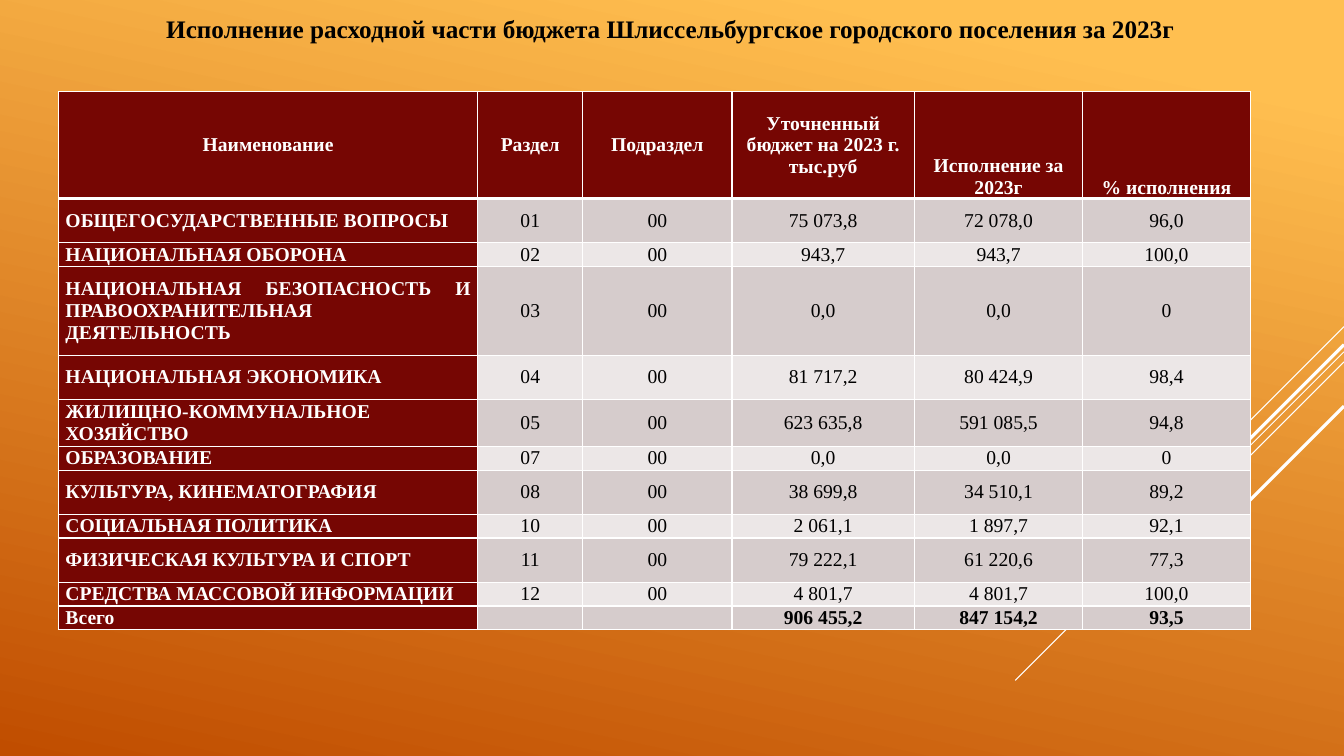
"""Builds the slide on budget spending of the Shlisselburg settlement in 2023."""
from lxml import etree
from pptx import Presentation
from pptx.dml.color import RGBColor
from pptx.enum.shapes import MSO_CONNECTOR
from pptx.enum.text import MSO_ANCHOR, PP_ALIGN
from pptx.oxml.ns import qn
from pptx.util import Inches, Pt

STRAIGHT = MSO_CONNECTOR.STRAIGHT
MIDDLE, BOTTOM = MSO_ANCHOR.MIDDLE, MSO_ANCHOR.BOTTOM
CENTER, JUSTIFY = PP_ALIGN.CENTER, PP_ALIGN.JUSTIFY

FONT = "Times New Roman"
COLORS = {
    "light": "FFBF50", "dark": "C04D00", "white": "FFFFFF", "black": "000000",
    "maroon": "760603", "odd": "D6CCCC", "even": "ECE7E7",
}
TITLE = "Исполнение расходной части бюджета Шлиссельбургское городского поселения за 2023г"
HEADERS = ["Наименование", "Раздел", "Подраздел", "Уточненный бюджет на 2023 г. тыс.руб",
           "Исполнение за 2023г", "% исполнения"]
SPENDING = [
    ("ОБЩЕГОСУДАРСТВЕННЫЕ ВОПРОСЫ", "01", "00", "75 073,8", "72 078,0", "96,0"),
    ("НАЦИОНАЛЬНАЯ ОБОРОНА", "02", "00", "943,7", "943,7", "100,0"),
    ("НАЦИОНАЛЬНАЯ БЕЗОПАСНОСТЬ И ПРАВООХРАНИТЕЛЬНАЯ ДЕЯТЕЛЬНОСТЬ", "03", "00", "0,0", "0,0", "0"),
    ("НАЦИОНАЛЬНАЯ ЭКОНОМИКА", "04", "00", "81 717,2", "80 424,9", "98,4"),
    ("ЖИЛИЩНО-КОММУНАЛЬНОЕ ХОЗЯЙСТВО", "05", "00", "623 635,8", "591 085,5", "94,8"),
    ("ОБРАЗОВАНИЕ", "07", "00", "0,0", "0,0", "0"),
    ("КУЛЬТУРА, КИНЕМАТОГРАФИЯ", "08", "00", "38 699,8", "34 510,1", "89,2"),
    ("СОЦИАЛЬНАЯ ПОЛИТИКА", "10", "00", "2 061,1", "1 897,7", "92,1"),
    ("ФИЗИЧЕСКАЯ КУЛЬТУРА И СПОРТ", "11", "00", "79 222,1", "61 220,6", "77,3"),
    ("СРЕДСТВА МАССОВОЙ ИНФОРМАЦИИ", "12", "00", "4 801,7", "4 801,7", "100,0"),
    ("Всего", "", "", "906 455,2", "847 154,2", "93,5"),
]
COL_WIDTHS = [4.16, 1.04, 1.48, 1.81, 1.67, 1.66]
ROW_HEIGHTS = [1.06, 0.44, 0.22, 0.88, 0.44, 0.44, 0.22, 0.44, 0.22, 0.44, 0.22, 0.22]
SLIDE_W, SLIDE_H = 13.33, 7.5
RAYS = [(3.24, 1.0, 0.75), (3.49, 3.26, 0.75), (3.59, 2.07, 0.75),
        (3.42, 1.91, 2.25), (4.03, 1.39, 2.25)]


def rgb(name):
    return RGBColor.from_string(COLORS[name])


def write(p, text, size, color, bold, align):
    p.text = text
    p.alignment = align
    for r in p.runs:
        r.font.name, r.font.size, r.font.bold = FONT, Pt(size), bold
        r.font.color.rgb = rgb(color)
    if not text:
        etree.SubElement(p._p, qn("a:endParaRPr"), sz=str(size * 100))


def set_borders(cell, row):
    widths = {"lnL": 1, "lnR": 1, "lnT": 3 if row == 1 else 1, "lnB": 3 if row == 0 else 1}
    for side, width in widths.items():
        ln = etree.SubElement(cell._tc.get_or_add_tcPr(), qn("a:" + side), w=str(Pt(width)))
        fill = etree.SubElement(ln, qn("a:solidFill"))
        etree.SubElement(fill, qn("a:srgbClr"), val=COLORS["white"])


def add_rays(s):
    for top, length, width in RAYS:
        line = s.shapes.add_connector(STRAIGHT, Inches(SLIDE_W), Inches(top),
                                      Inches(SLIDE_W - length), Inches(top + length))
        line.line.color.rgb = rgb("white")
        line.line.width = Pt(width)
        etree.SubElement(line._element.spPr, qn("a:effectLst"))


def add_spending_table(s):
    rows = [HEADERS] + SPENDING
    table = s.shapes.add_table(len(rows), len(HEADERS), Inches(0.58), Inches(0.91),
                               Inches(sum(COL_WIDTHS)), Inches(sum(ROW_HEIGHTS))).table
    table.first_row = table.horz_banding = False
    for column, width in zip(table.columns, COL_WIDTHS):
        column.width = Inches(width)
    for i, values in enumerate(rows):
        table.rows[i].height = Inches(ROW_HEIGHTS[i])
        for j, value in enumerate(values):
            cell = table.cell(i, j)
            label = i == 0 or j == 0
            cell.margin_left = cell.margin_right = Inches(0.07)
            cell.margin_top = cell.margin_bottom = 0
            cell.vertical_anchor = BOTTOM if i == 0 and j >= 4 else MIDDLE
            set_borders(cell, i)
            cell.fill.solid()
            cell.fill.fore_color.rgb = rgb("maroon" if label else "odd" if i % 2 else "even")
            write(cell.text_frame.paragraphs[0], value, 14, "white" if label else "black",
                  label or i == len(rows) - 1, JUSTIFY if i and j == 0 else CENTER)


def main():
    prs = Presentation()
    prs.slide_width, prs.slide_height = Inches(SLIDE_W), Inches(SLIDE_H)
    s = prs.slides.add_slide(prs.slide_layouts[6])

    fill = s.background.fill
    fill.gradient()
    fill.gradient_angle = 258
    for stop, position, color in zip(fill.gradient_stops, (0.1, 1), ("light", "dark")):
        stop.position = position
        stop.color.rgb = rgb(color)

    add_rays(s)
    tf = s.shapes.add_textbox(Inches(0.32), Inches(0.08), Inches(12.66), Inches(0.4)).text_frame
    tf.word_wrap = True
    write(tf.paragraphs[0], TITLE, 18, "black", True, CENTER)
    add_spending_table(s)
    prs.save("out.pptx")


if __name__ == "__main__":
    main()
